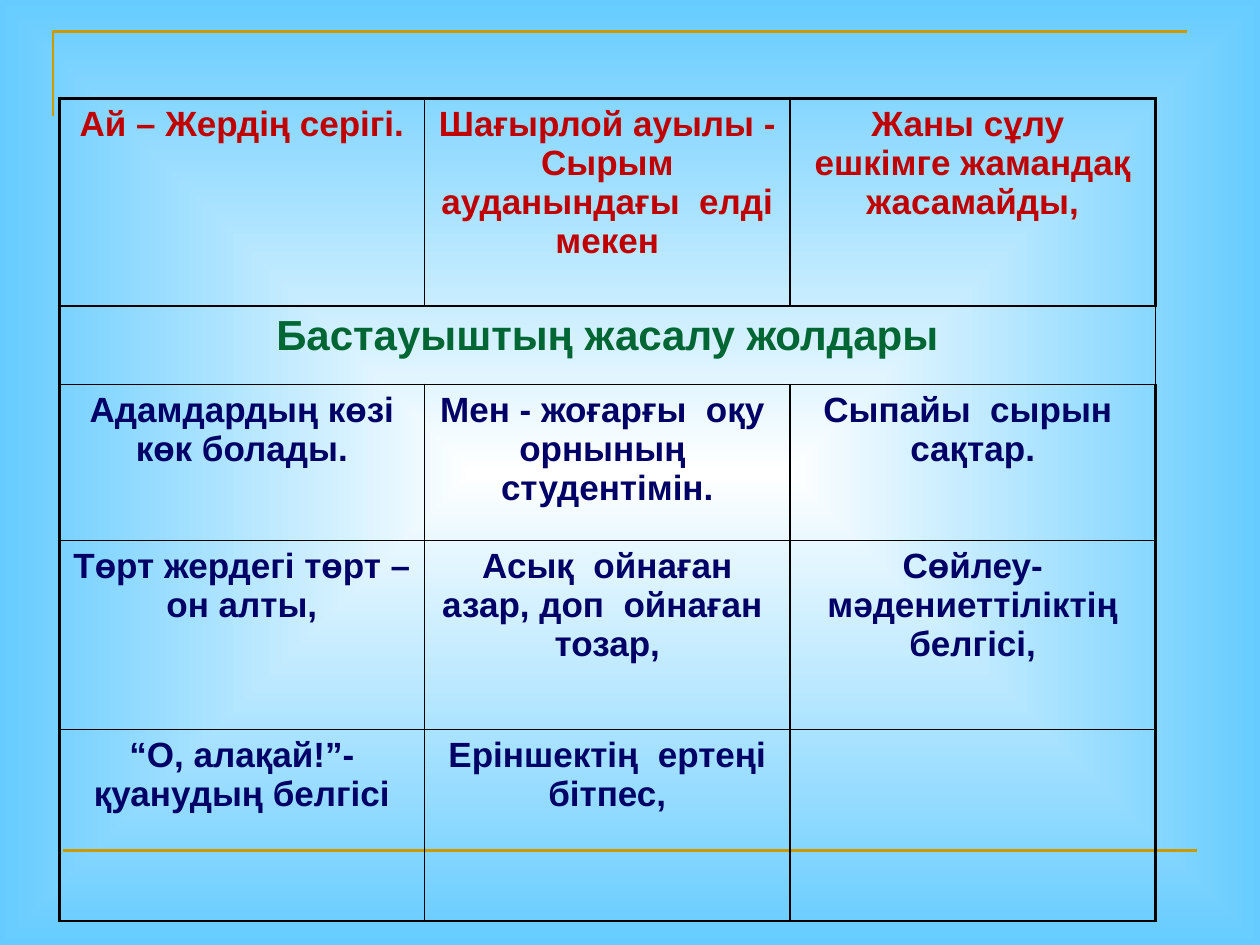
import dataclasses

import pptx
import pptx.dml.color
import pptx.enum.text
import pptx.oxml
import pptx.oxml.ns
import pptx.util


@dataclasses.dataclass(frozen=True)
class Theme:
    """Colours, font and sizes of the slide."""
    centre: str = "FFFFFF"
    edge: str = "66CCFF"
    accent: str = "CC9900"
    border: str = "000000"
    top: str = "C00000"
    heading: str = "006633"
    body: str = "000066"
    font: str = "Arial"
    text_size: int = 20
    heading_size: int = 24
    thin: float = 1
    thick: float = 2.25
    rule: float = 1.5


THEME = Theme()
WIDTH, HEIGHT = pptx.util.Inches(10), pptx.util.Inches(7.5)
HEADING_ROW = 1
ROW_HEIGHTS = (1.65, 0.62, 1.24, 1.5, 1.52)
COLUMN_WIDTH = 2.9
ROWS = (
    ("Ай – Жердің серігі.", "Шағырлой ауылы - Сырым ауданындағы  елді мекен",
     "Жаны сұлу  ешкімге жамандақ жасамайды,"),
    ("Бастауыштың жасалу жолдары", "", ""),
    ("Адамдардың көзі көк болады.", "Мен - жоғарғы  оқу  орнының  студентімін.",
     "Сыпайы  сырын  сақтар."),
    ("Төрт жердегі төрт –он алты,", "Асық  ойнаған азар, доп  ойнаған  тозар,",
     "Сөйлеу-мәдениеттіліктің белгісі,"),
    ("“О, алақай!”- қуанудың белгісі", "Еріншектің  ертеңі бітпес,", ""),
)


def rgb(value):
    """Return a colour object for a hex string."""
    return pptx.dml.color.RGBColor.from_string(value)


def at(x, y):
    """Turn shares of the slide's size into a point."""
    return round(WIDTH * x), round(HEIGHT * y)


def element(xml):
    """Parse a DrawingML element written with the a: prefix."""
    head, tail = xml.split(" ", 1)
    return pptx.oxml.parse_xml(f"{head} {pptx.oxml.ns.nsdecls('a')} {tail}")


def paint_background(s):
    """Fill the background with a gradient spreading from the centre."""
    fill = s.background.fill
    fill.gradient()
    for stop, colour in zip(fill.gradient_stops, (THEME.centre, THEME.edge)):
        stop.color.rgb = rgb(colour)
    grad = s.element.find(".//" + pptx.oxml.ns.qn("a:gradFill"))
    grad.remove(grad.find(pptx.oxml.ns.qn("a:lin")))
    grad.append(element('<a:path path="shape"><a:fillToRect l="50000" t="50000" '
                        'r="50000" b="50000"/></a:path>'))


def style_line(sp):
    """Give an accent line its colour and width."""
    sp.line.color.rgb = rgb(THEME.accent)
    sp.line.width = pptx.util.Pt(THEME.rule)


def add_corner(s, bottom, corner, right):
    """Draw the open corner at the top left."""
    builder = s.shapes.build_freeform(*at(*bottom))
    builder.add_line_segments([at(*corner), at(*right)], close=False)
    sp = builder.convert_to_shape()
    sp.fill.background()
    sp.shadow.inherit = False
    style_line(sp)


def add_rule(s, start, end):
    """Draw a straight accent line."""
    sp = s.shapes.add_connector(pptx.enum.shapes.MSO_CONNECTOR.STRAIGHT, *at(*start), *at(*end))
    style_line(sp)
    sp.element.spPr.append(element("<a:effectLst />"))


def set_borders(cell, widths):
    """Draw the left, right, top and bottom borders of a cell."""
    tcPr = cell._tc.get_or_add_tcPr()
    for side, width in zip("LRTB", widths):
        tcPr.append(element(
            f'<a:ln{side} w="{pptx.util.Pt(width)}"><a:solidFill>'
            f'<a:srgbClr val="{THEME.border}"/></a:solidFill></a:ln{side}>'))


def set_text(cell, text, size, colour):
    """Write centred bold text in a cell."""
    p = cell.text_frame.paragraphs[0]
    p.text = text
    p.alignment = pptx.enum.text.PP_ALIGN.CENTER
    p._p.get_or_add_pPr().append(element('<a:spcBef ><a:spcPct val="20000"/></a:spcBef>'))
    for r in p.runs:
        r.font.name, r.font.size, r.font.bold = THEME.font, pptx.util.Pt(size), True
        r.font.color.rgb = rgb(colour)


def add_table(s, x, y):
    """Add the table of sentences with its merged heading row."""
    columns = len(ROWS[0])
    size = [pptx.util.Inches(n) for n in (COLUMN_WIDTH * columns, sum(ROW_HEIGHTS))]
    table = s.shapes.add_table(len(ROWS), columns, *at(x, y), *size).table
    table.first_row = table.horz_banding = False
    for column in table.columns:
        column.width = pptx.util.Inches(COLUMN_WIDTH)
    styles = {0: (THEME.text_size, THEME.top),
              HEADING_ROW: (THEME.heading_size, THEME.heading)}
    for i, texts in enumerate(ROWS):
        table.rows[i].height = pptx.util.Inches(ROW_HEIGHTS[i])
        for j, text in enumerate(texts):
            cell = table.cell(i, j)
            outer = (j == 0, j == columns - 1, i == 0, False)
            set_borders(cell, [THEME.thick if edge else THEME.thin for edge in outer])
            cell.fill.background()
            set_text(cell, text, *styles.get(i, (THEME.text_size, THEME.body)))
    table.cell(HEADING_ROW, 0).merge(table.cell(HEADING_ROW, columns - 1))


def main():
    """Build the slide and save it."""
    prs = pptx.Presentation()
    prs.slide_width, prs.slide_height = WIDTH, HEIGHT
    s = prs.slides.add_slide(prs.slide_layouts[6])
    paint_background(s)
    add_corner(s, (0.042, 0.123), (0.042, 0.033), (0.942, 0.033))
    add_rule(s, (0.05, 0.9), (0.95, 0.9))
    add_table(s, 0.047, 0.104)
    prs.save("out.pptx")


if __name__ == "__main__":
    main()
